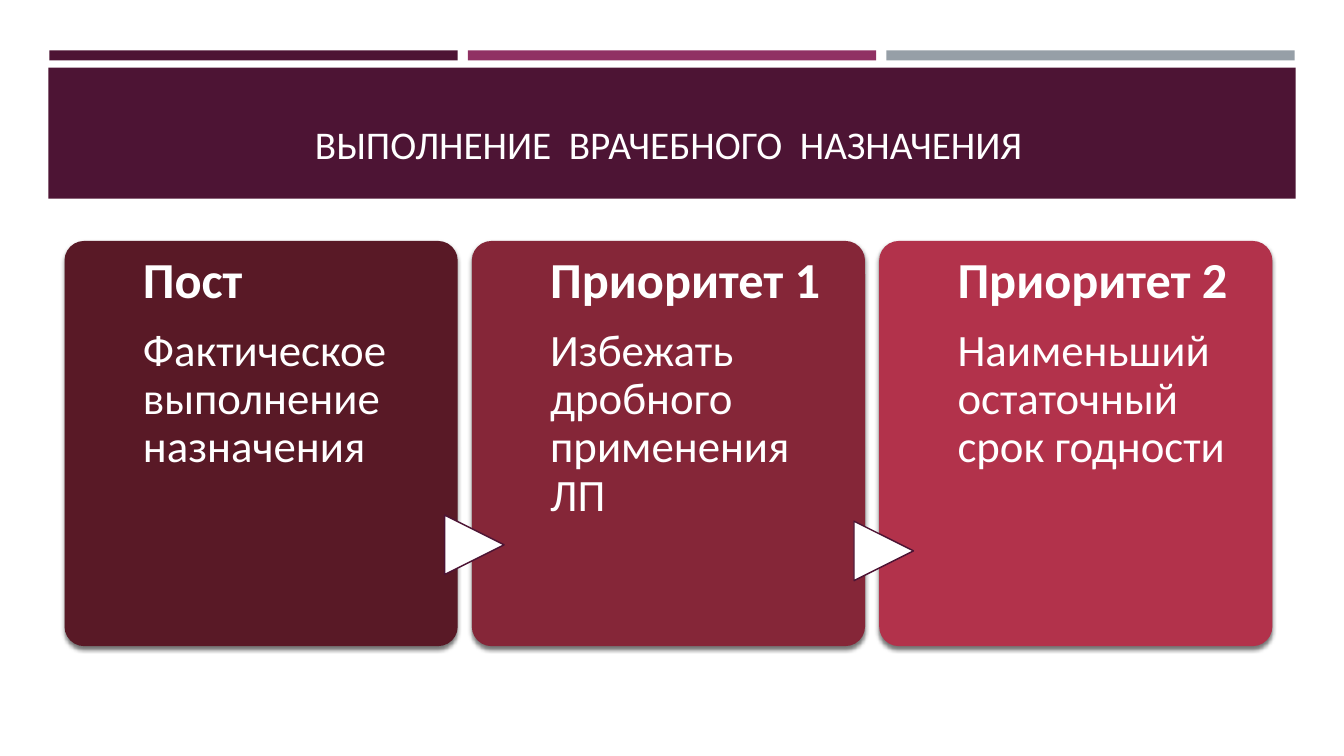
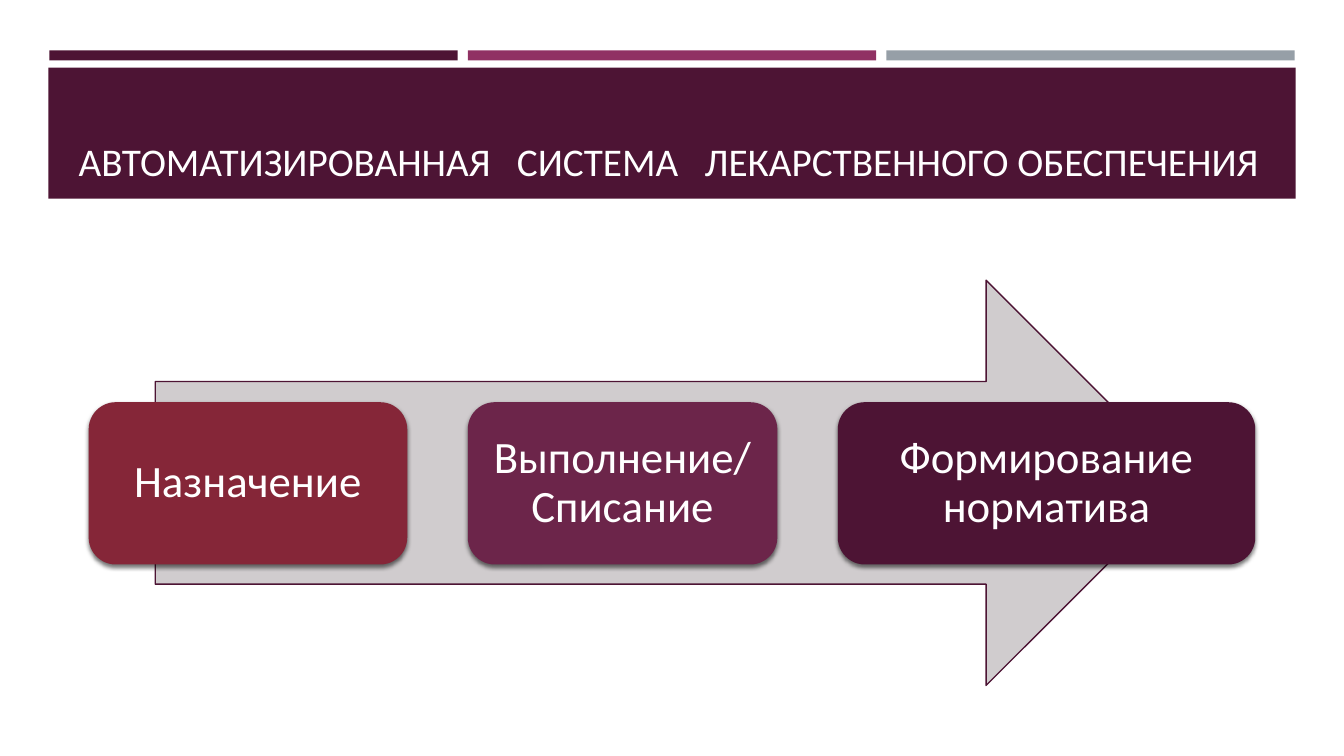
from dataclasses import dataclass

from lxml.etree import SubElement
from pptx import Presentation
from pptx.dml.color import RGBColor
from pptx.enum.shapes import MSO_SHAPE
from pptx.enum.text import MSO_ANCHOR, MSO_AUTO_SIZE, PP_ALIGN
from pptx.oxml.ns import qn
from pptx.util import Inches, Pt


@dataclass(frozen=True)
class Theme:
    font: str = "Calibri"
    white: str = "FFFFFF"
    plum: str = "4D1434"
    pink: str = "903163"
    steel: str = "969FA7"
    wine: str = "591926"
    ruby: str = "852638"
    rose: str = "B2324B"
    grape: str = "6C254A"
    ash: str = "D0CCCE"
    title: int = 28
    head: int = 36
    body: int = 32


T = Theme()


# Text
def write(para, text, size=T.body, bold=False, color=T.white, gap=0,
          align=PP_ALIGN.LEFT, line=None, after=None):
    """Add a run; gap is extra letter spacing in points."""
    para.alignment = align
    if line:
        para.line_spacing = line
    if after:
        para.space_after = Pt(after)
    run = para.add_run()
    run.text = text
    font = run.font
    font.name, font.size, font.bold = T.font, Pt(size), bold
    font.color.rgb = RGBColor.from_string(color)
    if gap:
        run._r.get_or_add_rPr().set("spc", str(round(gap * 100)))


def pad(frame, left, top, right, base, anchor):
    frame.word_wrap = True
    frame.margin_left, frame.margin_top = Inches(left), Inches(top)
    frame.margin_right, frame.margin_bottom = Inches(right), Inches(base)
    frame.vertical_anchor = anchor


# Shapes
def draw(slide, kind, left, top, width, height, fill, line=None, shade=False):
    shape = slide.shapes.add_shape(kind, Inches(left), Inches(top),
                                   Inches(width), Inches(height))
    shape.fill.solid()
    shape.fill.fore_color.rgb = RGBColor.from_string(fill)
    if line:
        shape.line.color.rgb = RGBColor.from_string(line)
        shape.line.width = Pt(1)
    else:
        shape.line.fill.background()
    shape.shadow.inherit = False
    if shade:
        effect = shape._element.spPr.find(qn("a:effectLst"))
        outer = SubElement(effect, qn("a:outerShdw"), blurRad=str(Pt(3)),
                           dist=str(Pt(2)), dir="5400000", rotWithShape="0")
        color = SubElement(outer, qn("a:srgbClr"), val="000000")
        SubElement(color, qn("a:alpha"), val="55000")
    return shape


def card(slide, left, fill, head, body):
    shape = draw(slide, MSO_SHAPE.ROUNDED_RECTANGLE, left, 2.39, 3.9, 4.02,
                 fill, shade=True)
    shape.adjustments[0] = 0.05
    frame = shape.text_frame
    pad(frame, 0.72, 0.08, 0.15, 0, MSO_ANCHOR.TOP)
    write(frame.paragraphs[0], head, size=T.head, bold=True, line=0.9, after=13)
    write(frame.add_paragraph(), body, line=0.9)


def step(slide, left, width, fill, text):
    shape = draw(slide, MSO_SHAPE.ROUNDED_RECTANGLE, left, 3.99, width, 1.61,
                 fill, shade=True)
    frame = shape.text_frame
    pad(frame, 0.13, 0.13, 0.13, 0.13, MSO_ANCHOR.MIDDLE)
    write(frame.paragraphs[0], text, align=PP_ALIGN.CENTER, line=0.9)


# Shared bands, kept on the layout behind the title
def band(layout, slide):
    bars = [draw(slide, MSO_SHAPE.RECTANGLE, 0.49 + 4.15 * i, 0.5, 4.05, 0.1, fill)
            for i, fill in enumerate((T.plum, T.pink, T.steel))]
    bars.append(draw(slide, MSO_SHAPE.RECTANGLE, 0.48, 0.67, 12.37, 1.3, T.plum))
    for i, bar in enumerate(bars):
        layout.shapes._spTree.insert(2 + i, bar._element)


def title(slide, parts, height, gap):
    """Set the title, with a widened space between its parts."""
    shape = slide.shapes.title
    shape.left, shape.top = Inches(0.6), Inches(0.77)
    shape.width, shape.height = Inches(12.06), Inches(height)
    frame = shape.text_frame
    frame.auto_size = MSO_AUTO_SIZE.NONE
    pad(frame, 0.1, 0.05, 0.1, 0.05, MSO_ANCHOR.BOTTOM)
    style = dict(size=T.title, align=PP_ALIGN.CENTER)
    para = frame.paragraphs[0]
    for i, part in enumerate(parts):
        if i:
            write(para, " ", gap=gap, **style)
        write(para, part, **style)


# Slides
def order(slide):
    title(slide, ("ВЫПОЛНЕНИЕ", "ВРАЧЕБНОГО", "НАЗНАЧЕНИЯ"), 0.94, 6.3)
    cards = ((T.wine, "Пост", "Фактическое выполнение назначения"),
             (T.ruby, "Приоритет 1", "Избежать дробного применения ЛП"),
             (T.rose, "Приоритет 2", "Наименьший остаточный срок годности"))
    for i, (fill, head, body) in enumerate(cards):
        card(slide, 0.64 + 4.04 * i, fill, head, body)
    for left, top in ((4.41, 5.11), (8.47, 5.17)):
        mark = draw(slide, MSO_SHAPE.FLOWCHART_EXTRACT, left, top, 0.59, 0.59,
                    T.white, line=T.plum)
        mark.rotation = 90


def system(slide):
    title(slide, ("АВТОМАТИЗИРОВАННАЯ", "СИСТЕМА", "ЛЕКАРСТВЕННОГО ОБЕСПЕЧЕНИЯ"),
          1.11, 12.6)
    draw(slide, MSO_SHAPE.RIGHT_ARROW, 1.54, 2.78, 10.25, 4.02, T.ash, line=T.plum)
    left = 0.88
    for width, fill, text in ((3.16, T.ruby, "Назначение"),
                              (3.07, T.grape, "Выполнение/ Списание"),
                              (4.14, T.plum, "Формирование норматива")):
        step(slide, left, width, fill, text)
        left += width + 0.6


def main():
    deck = Presentation()
    deck.slide_width, deck.slide_height = Inches(13.33), Inches(7.5)
    layout = deck.slide_layouts[5]
    first, second = [deck.slides.add_slide(layout) for _ in range(2)]
    band(layout, first)
    order(first)
    system(second)
    deck.save("out.pptx")


if __name__ == "__main__":
    main()
